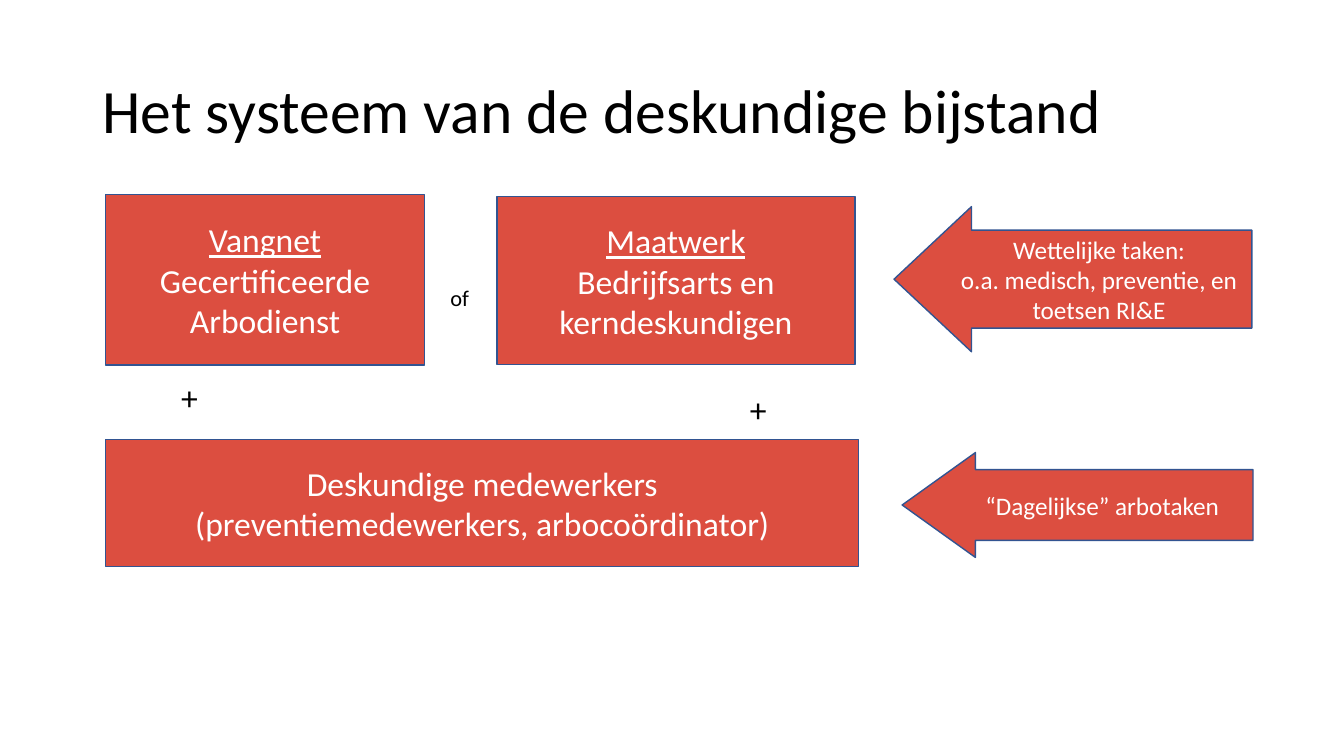
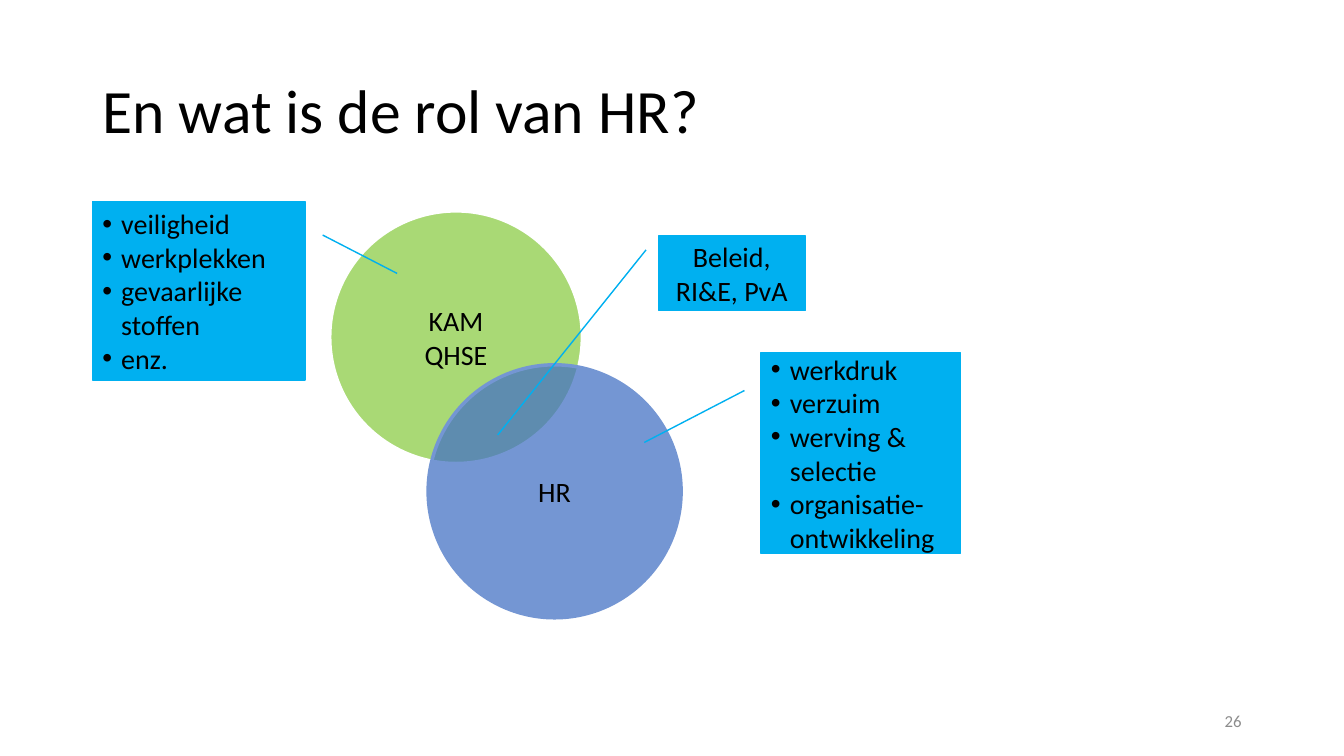
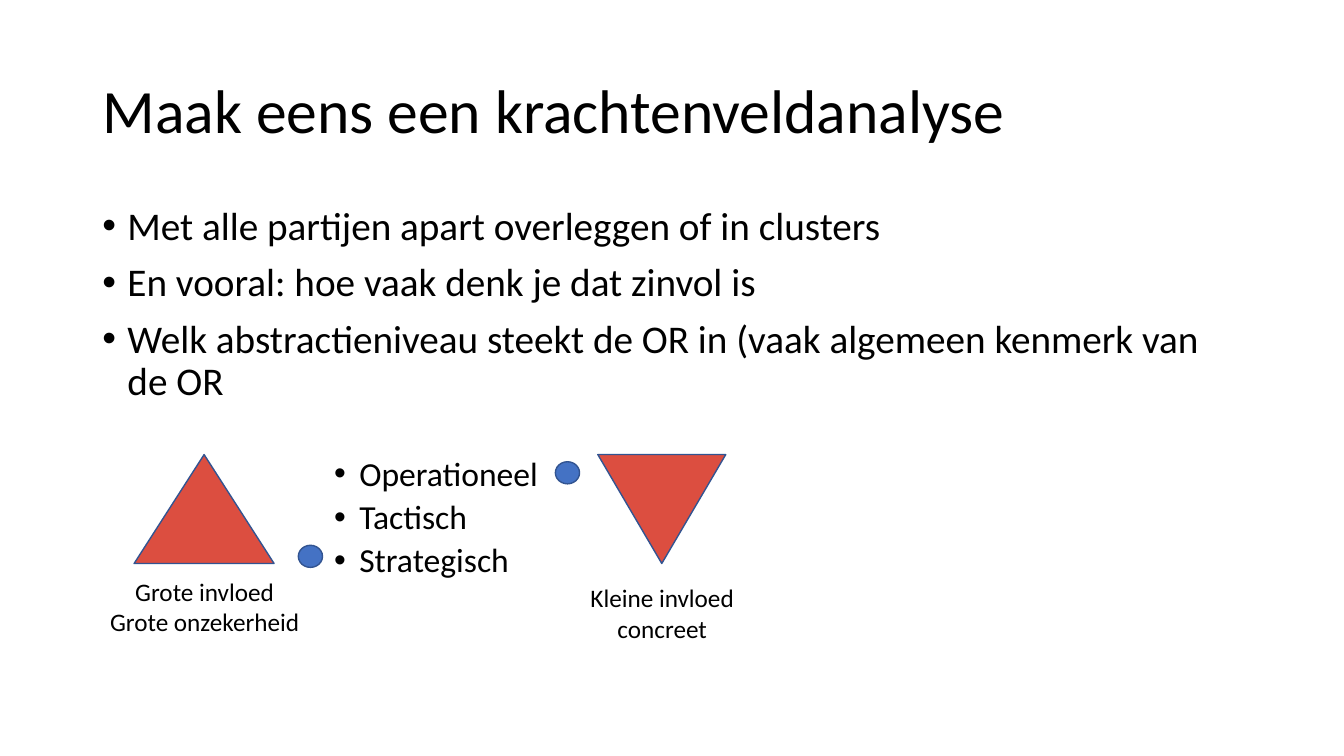
import dataclasses

import pptx
import pptx.dml.color
import pptx.enum.shapes
import pptx.enum.text
import pptx.oxml.ns
import pptx.util
from lxml import etree

Pt = pptx.util.Pt
SHAPE = pptx.enum.shapes.MSO_SHAPE
ALIGN = pptx.enum.text.PP_ALIGN
ANCHOR = pptx.enum.text.MSO_ANCHOR
qn = pptx.oxml.ns.qn

FONT = "Calibri"
BLACK, WHITE, GREY = "000000", "FFFFFF", "8C8C8C"
RED, NAVY, BLUE = "DC4E40", "325491", "4472C4"
GREEN, LIGHT_BLUE, CYAN = "92D050", "7496D3", "00B0F0"


@dataclasses.dataclass
class Box:
    left: float
    top: float
    width: float
    height: float

    def inner(self, left, top, width, height):
        """Box whose position is counted from this box's corner."""
        return Box(self.left + left, self.top + top, width, height)

    def lengths(self):
        return [Pt(round(value, 2)) for value in dataclasses.astuple(self)]


PAGE = Box(0, 0, 960, 540)
TITLE = Box(66, 28.8, 828, 104.4)
CONTENT = Box(66, 144, 828, 342.7)


def rgb(color):
    return pptx.dml.color.RGBColor.from_string(color)


def apply(target, formats):
    for name, value in formats.items():
        setattr(target, name, value)


def add_bullet(para, indent):
    properties = para._p.get_or_add_pPr()
    properties.set("marL", str(Pt(indent)))
    properties.set("indent", str(-Pt(indent)))
    etree.SubElement(properties, qn("a:buFont")).set("typeface", "Arial")
    etree.SubElement(properties, qn("a:buChar")).set("char", "•")


def write(shape, lines, size, color=BLACK, align=ALIGN.CENTER, anchor=ANCHOR.MIDDLE,
          indent=0, line_spacing=None, gap=0, underline_first=False):
    frame = shape.text_frame
    apply(frame, {"word_wrap": True, "vertical_anchor": anchor})
    for index, line in enumerate(lines):
        para = frame.add_paragraph() if index else frame.paragraphs[0]
        if indent:
            add_bullet(para, indent)
        apply(para, {"alignment": align, "line_spacing": line_spacing,
                     "space_before": Pt(gap if index else 0)})
        span = para.add_run()
        span.text = line
        apply(span.font, {"name": FONT, "size": Pt(size)})
        if underline_first and index == 0:
            span.font.underline = True
        span.font.color.rgb = rgb(color)


def add_text(page, box, lines, size, **formats):
    shape = page.shapes.add_textbox(*box.lengths())
    write(shape, lines, size, **formats)
    return shape


def add_label(page, box, lines, size, align=ALIGN.CENTER):
    """Unwrapped text whose box fits its words."""
    shape = add_text(page, box, lines, size, align=align, anchor=ANCHOR.TOP)
    apply(shape.text_frame, {"word_wrap": False,
                             "auto_size": pptx.enum.text.MSO_AUTO_SIZE.SHAPE_TO_FIT_TEXT})


def add_figure(page, kind, box, fill=RED, line=NAVY, line_width=1, opacity=100, adjustments=()):
    shape = page.shapes.add_shape(kind, *box.lengths())
    shape.shadow.inherit = False
    shape.fill.solid()
    shape.fill.fore_color.rgb = rgb(fill)
    if opacity < 100:
        fill_color = shape.fill._xPr.find(qn("a:solidFill"))[0]
        etree.SubElement(fill_color, qn("a:alpha")).set("val", str(opacity * 1000))
    shape.line.color.rgb = rgb(line)
    shape.line.width = Pt(line_width)
    for index, value in enumerate(adjustments):
        shape.adjustments[index] = value
    return shape


def add_page(deck, title):
    page = deck.slides.add_slide(deck.slide_layouts[5])
    holder = page.shapes.title
    apply(holder, dict(zip(("left", "top", "width", "height"), TITLE.lengths())))
    write(holder, [title], 44, align=ALIGN.LEFT, line_spacing=0.9)
    return page


def add_support_scheme(page, region):
    blocks = [
        ((0, 0, 227.5, 121.7), ["Vangnet", "Gecertificeerde Arbodienst"], True),
        ((279.4, 1.4, 255.6, 120.2), ["Maatwerk", "Bedrijfsarts en kerndeskundigen"], True),
        ((0, 174.9, 537.8, 90.7),
         ["Deskundige medewerkers", "(preventiemedewerkers, arbocoördinator)"], False),
    ]
    for place, lines, headed in blocks:
        block = add_figure(page, SHAPE.RECTANGLE, region.inner(*place))
        write(block, lines, 24, WHITE, underline_first=headed)

    arrows = [
        ((563, 8.6, 255.6, 103.7), 0.534,
         ["Wettelijke taken:", "o.a. medisch, preventie, en toetsen RI&E"]),
        ((568.8, 184.3, 250.6, 74.9), 0.699, ["“Dagelijkse” arbotaken"]),
    ]
    for place, head, lines in arrows:
        arrow = add_figure(page, SHAPE.LEFT_ARROW, region.inner(*place), adjustments=(0.675, head))
        write(arrow, lines, 18, WHITE)

    signs = [
        ((239, 60.4, 30.2, 26.6), "of", 16),
        ((46.8, 126.7, 31.7, 36), "+", 24),
        ((452.9, 135.3, 31.7, 36), "+", 24),
    ]
    for place, sign, size in signs:
        add_label(page, region.inner(*place), [sign], size, ALIGN.LEFT)


def add_role_circles(page, region):
    diameter = 180.7
    circles = [
        (169.4, 6.5, ["KAM", "QHSE"], GREEN, WHITE, 2.75, 79),
        (239.8, 116.6, ["HR"], BLUE, LIGHT_BLUE, 2.5, 74),
    ]
    for left, top, lines, fill, line, line_width, opacity in circles:
        circle = add_figure(page, SHAPE.OVAL, region.inner(left, top, diameter, diameter),
                            fill, line, line_width, opacity)
        write(circle, lines, 20)

    bulleted = {"align": ALIGN.LEFT, "indent": 13.5}
    callouts = [
        ((404.2, 24.5, 105.1, 53.3), (-0.083, 2.669, -1.091), ["Beleid, RI&E, PvA"], {}),
        ((477.6, 108, 142.6, 143.3), (-0.083, 0.447, -0.585),
         ["werkdruk", "verzuim", "werving & selectie", "organisatie- ontwikkeling"], bulleted),
        ((0, 0, 151.9, 127.4), (1.083, 0.403, 1.433),
         ["veiligheid", "werkplekken", "gevaarlijke stoffen", "enz."], bulleted),
    ]
    for place, pointer, lines, formats in callouts:
        callout = add_figure(page, SHAPE.LINE_CALLOUT_1, region.inner(*place), CYAN, CYAN,
                             adjustments=(0.188, *pointer))
        write(callout, lines, 20, **formats)


def add_page_number(page, box, number):
    add_text(page, box, [number], 12, color=GREY, align=ALIGN.RIGHT)


def add_bullets(page, box, lines, size, gap):
    add_text(page, box, lines, size, align=ALIGN.LEFT, anchor=ANCHOR.TOP,
             indent=18, line_spacing=0.9, gap=gap)


def add_force_field(page, region):
    add_bullets(page, region.inner(0, 0, region.width, 150), [
        "Met alle partijen apart overleggen of in clusters",
        "En vooral: hoe vaak denk je dat zinvol is",
        "Welk abstractieniveau steekt de OR in (vaak algemeen kenmerk van de OR",
    ], 28, 10)
    add_bullets(page, region.inner(165.6, 179, 175, 100),
                ["Operationeel", "Tactisch", "Strategisch"], 24, 5)

    for left, width, rotation in ((29.8, 100, 0), (361, 91.4, 180)):
        triangle = add_figure(page, SHAPE.ISOSCELES_TRIANGLE,
                              region.inner(left, 180.7, width, 77.8))
        triangle.rotation = rotation

    add_label(page, region.inner(4.6, 264.2, 151.2, 51.1),
              ["Grote invloed", "Grote onzekerheid"], 18)
    add_label(page, region.inner(348, 268.6, 118, 51.1), ["Kleine invloed", "concreet"], 18)

    for left, top in ((147.1, 245.5), (330.7, 185.8)):
        add_figure(page, SHAPE.OVAL, region.inner(left, top, 17.3, 15.8), BLUE)


def main():
    deck = pptx.Presentation()
    deck.slide_width, deck.slide_height = Pt(PAGE.width), Pt(PAGE.height)

    page = add_page(deck, "Het systeem van de deskundige bijstand")
    add_support_scheme(page, Box(75.6, 139, 819.4, 265.6))

    page = add_page(deck, "En wat is de rol van HR?")
    add_page_number(page, Box(678, 500.4, 216, 28.8), "26")
    add_role_circles(page, CONTENT)

    page = add_page(deck, "Maak eens een krachtenveldanalyse")
    add_force_field(page, CONTENT)

    deck.save("out.pptx")


if __name__ == "__main__":
    main()
